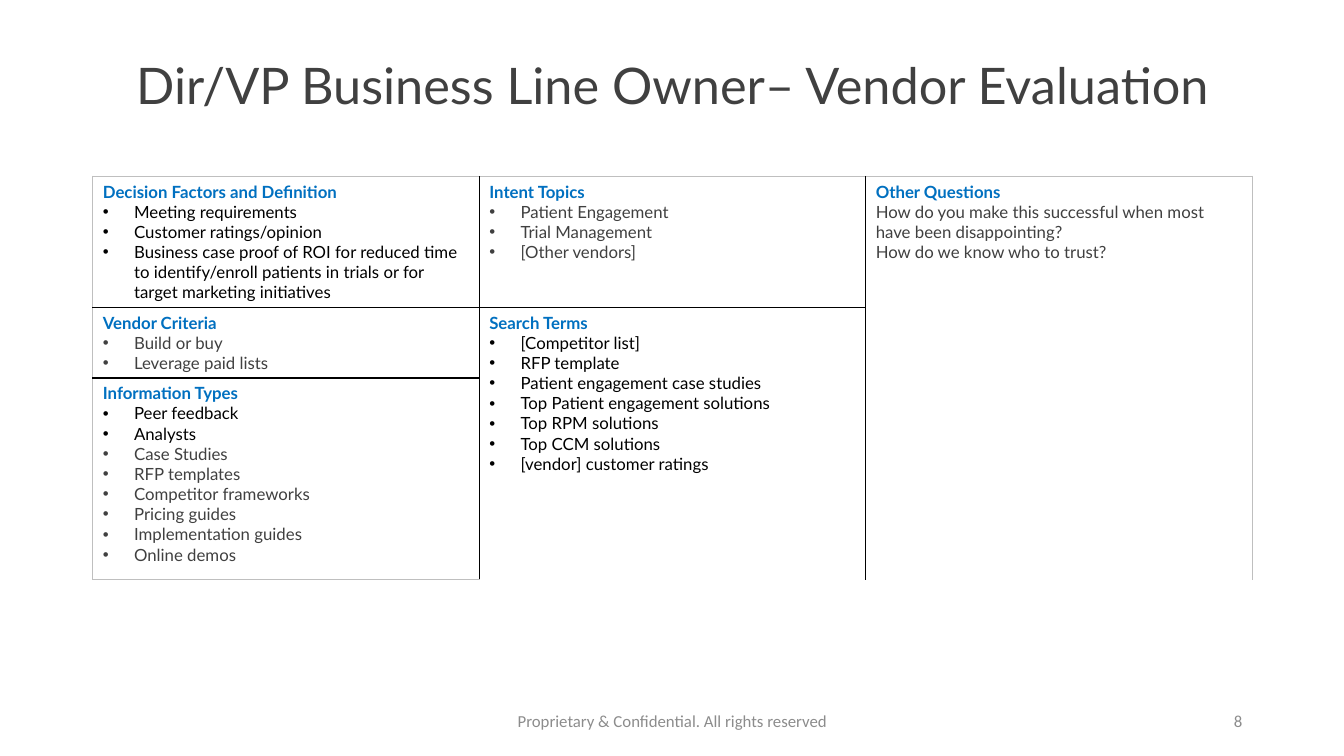
"""Build the vendor evaluation slide."""
import pptx
import pptx.util
import pptx.dml.color
import pptx.enum.text
from lxml import etree
from pptx.oxml.ns import qn

Inches = pptx.util.Inches
Pt = pptx.util.Pt
RGB = pptx.dml.color.RGBColor
ALIGN = pptx.enum.text.PP_ALIGN
MIDDLE = pptx.enum.text.MSO_ANCHOR.MIDDLE

BLACK = RGB(0x00, 0x00, 0x00)
DARK = RGB(0x40, 0x40, 0x40)
BLUE = RGB(0x00, 0x70, 0xC0)
GREY = RGB(0x8C, 0x8C, 0x8C)
PALE = RGB(0xBF, 0xBF, 0xBF)

TITLE = "Dir/VP Business Line Owner– Vendor Evaluation"
TABLE = (0.92, 1.75, 11.5, 4)
ROWS = (1.3, 0.7, 2)
COLS = 3

# row, column, rows spanned, heading, bulleted, groups of lines by colour
CELLS = [
    (0, 0, 1, "Decision Factors and Definition", True, [
        (BLACK, ["Meeting requirements", "Customer ratings/opinion",
                 "Business case proof of ROI for reduced time to identify/enroll "
                 "patients in trials or for target marketing initiatives"])]),
    (0, 1, 1, "Intent Topics", True, [
        (DARK, ["Patient Engagement", "Trial Management", "[Other vendors]"])]),
    (0, 2, 3, "Other Questions", False, [
        (DARK, ["How do you make this successful when most have been disappointing?",
                "How do we know who to trust?"])]),
    (1, 0, 1, "Vendor Criteria", True, [
        (DARK, ["Build or buy", "Leverage paid lists"])]),
    (1, 1, 2, "Search Terms", True, [
        (BLACK, ["[Competitor list]", "RFP template", "Patient engagement case studies",
                 "Top Patient engagement solutions", "Top RPM solutions",
                 "Top CCM solutions", "[vendor] customer ratings"])]),
    (2, 0, 1, "Information Types", True, [
        (BLACK, ["Peer feedback", "Analysts"]),
        (DARK, ["Case Studies", "RFP templates", "Competitor frameworks",
                "Pricing guides", "Implementation guides", "Online demos"])]),
]

FOOTERS = [
    ((4.42, 6.95, 4.5, 0.4), ALIGN.CENTER, "Proprietary & Confidential. All rights reserved"),
    ((9.42, 6.95, 3, 0.4), ALIGN.RIGHT, "8"),
]


def add_run(para, text, font, size, color, bold=False):
    """Add one styled run."""
    run = para.add_run()
    run.text = text
    run.font.name, run.font.size, run.font.bold = font, Pt(size), bold
    run.font.color.rgb = color


def add_bullet(para):
    """Give a paragraph a hanging bullet."""
    props = para._p.get_or_add_pPr()
    props.set("marL", str(Inches(0.31)))
    props.set("indent", str(-Inches(0.31)))
    etree.SubElement(props, qn("a:buFont")).set("typeface", "Arial")
    etree.SubElement(props, qn("a:buChar")).set("char", "•")


def add_edge(cell, side, color):
    """Draw one cell border, or clear it when the colour is None."""
    line = etree.SubElement(cell._tc.get_or_add_tcPr(), qn("a:ln" + side))
    if color is None:
        line.set("w", "0")
        etree.SubElement(line, qn("a:noFill"))
    else:
        line.set("w", str(Pt(1)))
        fill = etree.SubElement(line, qn("a:solidFill"))
        etree.SubElement(fill, qn("a:srgbClr")).set("val", str(color))


def fill_cell(cell, head, dots, groups):
    """Write a heading and its lines."""
    frame = cell.text_frame
    add_run(frame.paragraphs[0], head, "Lato", 12, BLUE, True)
    for color, lines in groups:
        for line in lines:
            para = frame.add_paragraph()
            if dots:
                add_bullet(para)
            add_run(para, line, "Lato", 12, color)


def add_grid(slide):
    """Add the table, its text and its borders."""
    box = map(Inches, TABLE)
    table = slide.shapes.add_table(len(ROWS), COLS, *box).table
    table.first_row = table.horz_banding = False
    for row, high in zip(table.rows, ROWS):
        row.height = Inches(high)
    owner = {}
    for top, col, span, head, dots, groups in CELLS:
        cell = table.cell(top, col)
        if span > 1:
            cell.merge(table.cell(top + span - 1, col))
        fill_cell(cell, head, dots, groups)
        for row in range(top, top + span):
            owner[row, col] = head
    for (row, col), head in owner.items():
        cell = table.cell(row, col)
        sides = {"L": (row, col - 1), "R": (row, col + 1),
                 "T": (row - 1, col), "B": (row + 1, col)}
        for side, spot in sides.items():
            near = owner.get(spot)
            color = PALE if near is None else None if near == head else BLACK
            add_edge(cell, side, color)
        cell.fill.background()


def main():
    """Make and save the slide."""
    deck = pptx.Presentation()
    deck.slide_width, deck.slide_height = Inches(13.33), Inches(7.5)
    slide = deck.slides.add_slide(deck.slide_layouts[5])
    title = slide.shapes.title
    title.left, title.top, title.width, title.height = map(Inches, (0.92, 0.4, 11.5, 0.95))
    title.text_frame.vertical_anchor = MIDDLE
    para = title.text_frame.paragraphs[0]
    para.alignment, para.line_spacing = ALIGN.CENTER, 0.9
    add_run(para, TITLE, "Lato", 36, DARK)
    add_grid(slide)
    for box, align, text in FOOTERS:
        frame = slide.shapes.add_textbox(*map(Inches, box)).text_frame
        frame.word_wrap, frame.vertical_anchor = True, MIDDLE
        frame.paragraphs[0].alignment = align
        add_run(frame.paragraphs[0], text, "Calibri", 12, GREY)
    deck.save("out.pptx")


if __name__ == "__main__":
    main()
